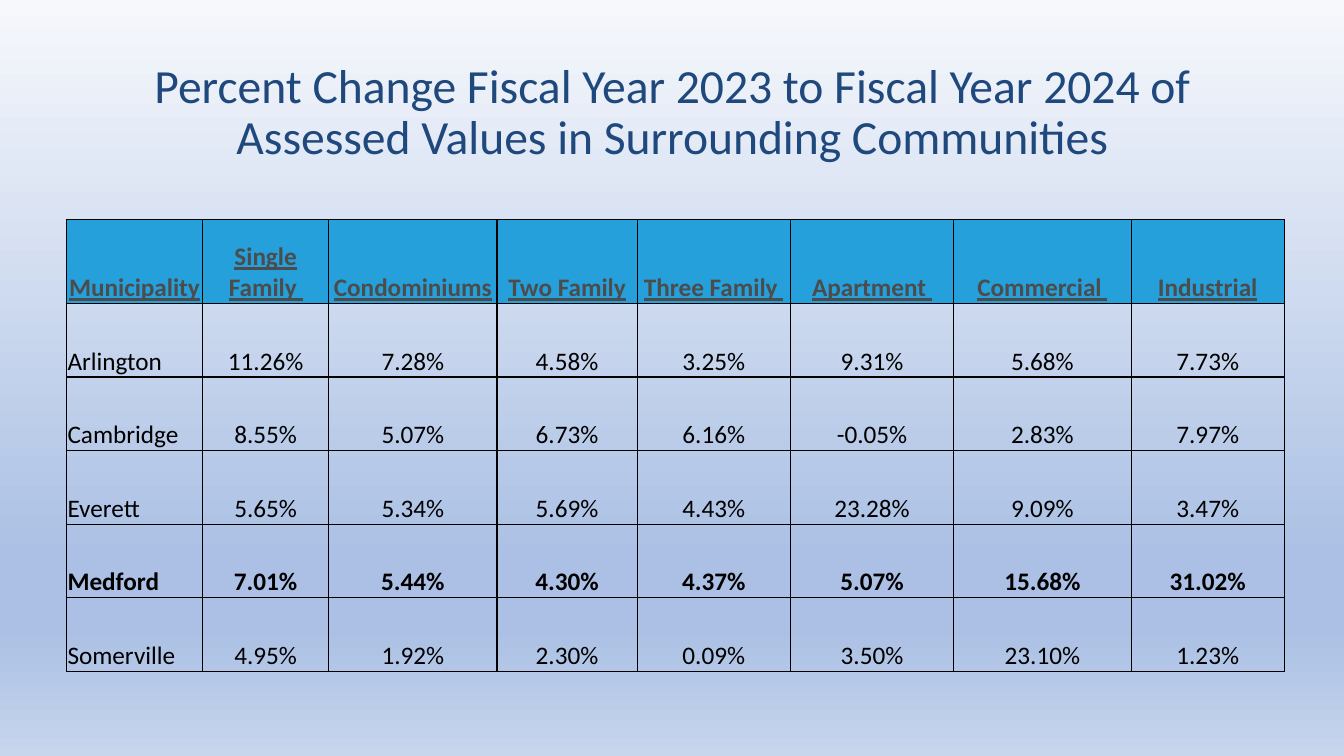
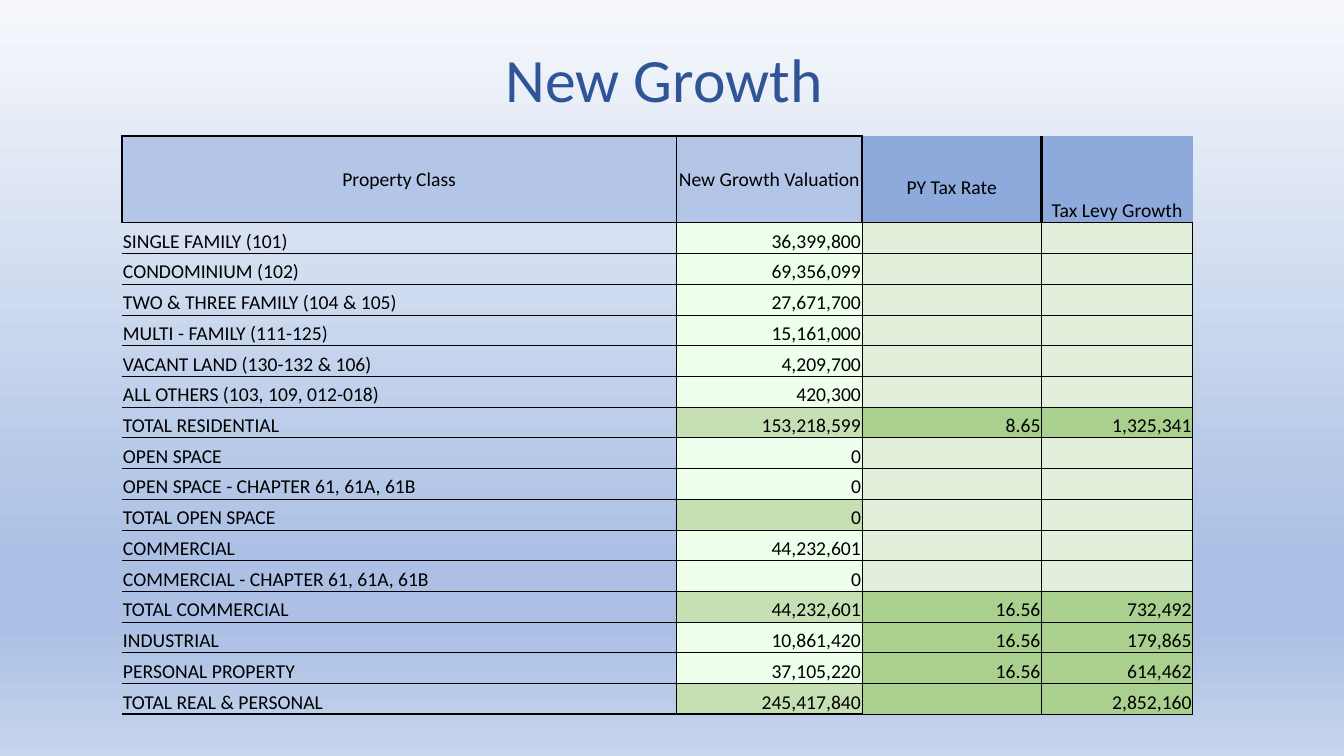
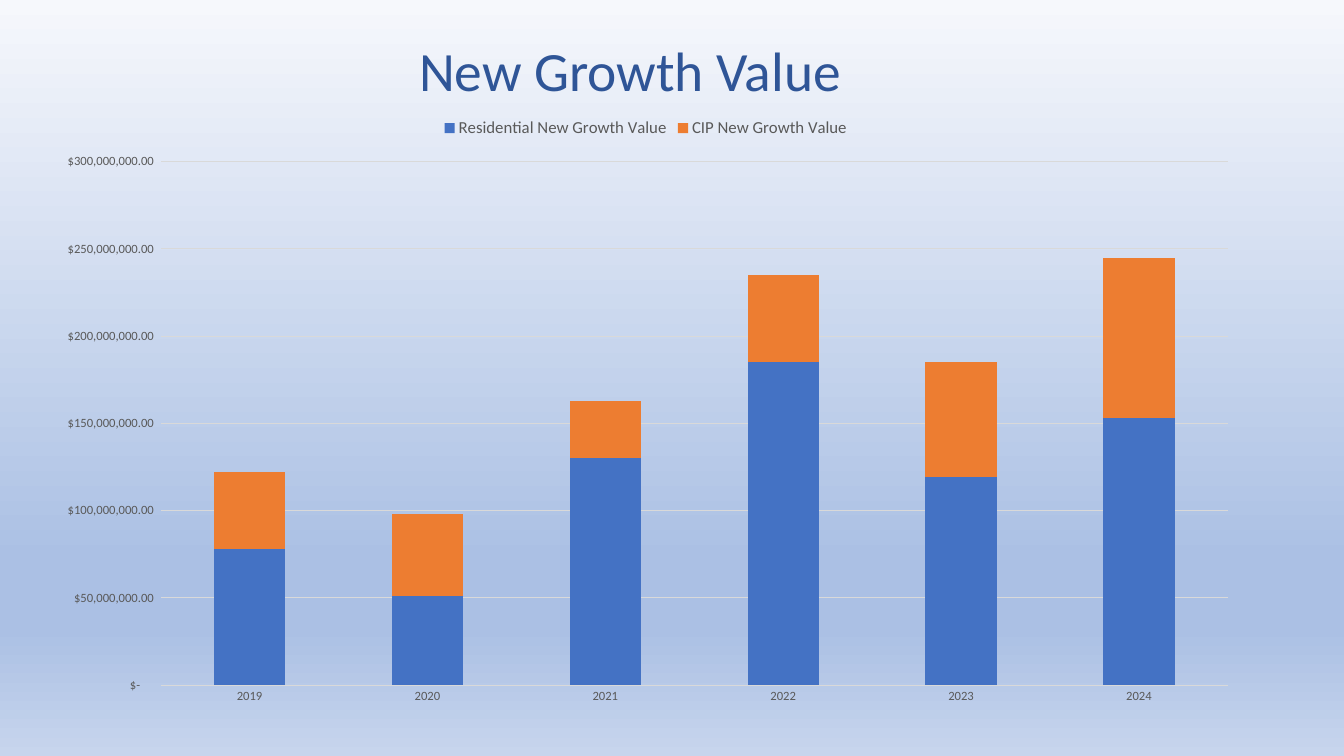
import lxml.etree
import pptx
import pptx.chart.data
import pptx.dml.color
import pptx.enum.chart
import pptx.enum.text
import pptx.oxml.ns
import pptx.util

Inches = pptx.util.Inches
Pt = pptx.util.Pt
RGBColor = pptx.dml.color.RGBColor
ALIGN = pptx.enum.text.PP_ALIGN
ANCHOR = pptx.enum.text.MSO_ANCHOR
qn = pptx.oxml.ns.qn

FONT = "Calibri"
BLACK = RGBColor(0x00, 0x00, 0x00)
NAVY = RGBColor(0x1F, 0x48, 0x7C)
BLUE = RGBColor(0x2F, 0x55, 0x97)
HEADER_CYAN = RGBColor(0x25, 0xA0, 0xDB)
HEADER_GRAY = RGBColor(0x4C, 0x4C, 0x4C)
HEADER_LIGHT = RGBColor(0xB4, 0xC6, 0xE7)
HEADER_DARK = RGBColor(0x8E, 0xA9, 0xDB)
VALUE_GREEN = RGBColor(0xEE, 0xFF, 0xEB)
TOTAL_GREEN = RGBColor(0xC6, 0xE0, 0xB4)
BLANK_GREEN = RGBColor(0xE2, 0xEF, 0xDA)
LEVY_GREEN = RGBColor(0xA9, 0xD0, 0x8E)
AXIS_GRAY = RGBColor(0x59, 0x59, 0x59)
GRID_GRAY = RGBColor(0xD9, 0xD9, 0xD9)
SERIES_BLUE = RGBColor(0x44, 0x72, 0xC4)
SERIES_ORANGE = RGBColor(0xED, 0x7D, 0x31)

BACKGROUND_STOPS = [(0, "F6F8FC"), (74, "ABC0E4"), (83, "ABC0E4"), (100, "C7D5ED")]
NO_TABLE_STYLE = "{2D5ABB26-0587-4C30-8999-92F81FD0307C}"
CURRENCY = '_("$"* #,##0.00_);_("$"* \\(#,##0.00\\);_("$"* "-"??_);_(@_)'
THIN, THICK = 0.5, 2

ASSESSMENTS = [
    ["Municipality", "Single Family ", "Condominiums", "Two Family",
     "Three Family ", "Apartment ", "Commercial ", "Industrial"],
    ["Arlington", "11.26%", "7.28%", "4.58%", "3.25%", "9.31%", "5.68%", "7.73%"],
    ["Cambridge", "8.55%", "5.07%", "6.73%", "6.16%", "-0.05%", "2.83%", "7.97%"],
    ["Everett", "5.65%", "5.34%", "5.69%", "4.43%", "23.28%", "9.09%", "3.47%"],
    ["Medford", "7.01%", "5.44%", "4.30%", "4.37%", "5.07%", "15.68%", "31.02%"],
    ["Somerville", "4.95%", "1.92%", "2.30%", "0.09%", "3.50%", "23.10%", "1.23%"],
]

GROWTH_HEADERS = ["Property Class", "New Growth Valuation", "PY Tax Rate", "Tax Levy Growth"]
GROWTH = [
    ["SINGLE FAMILY (101)", "36,399,800", "", ""],
    ["CONDOMINIUM (102)", "69,356,099", "", ""],
    ["TWO & THREE FAMILY (104 & 105)", "27,671,700", "", ""],
    ["MULTI - FAMILY (111-125)", "15,161,000", "", ""],
    ["VACANT LAND (130-132 & 106)", "4,209,700", "", ""],
    ["ALL OTHERS (103, 109, 012-018)", "420,300", "", ""],
    ["TOTAL RESIDENTIAL", "153,218,599", "8.65", "1,325,341"],
    ["OPEN SPACE", "0", "", ""],
    ["OPEN SPACE - CHAPTER 61, 61A, 61B", "0", "", ""],
    ["TOTAL OPEN SPACE", "0", "", ""],
    ["COMMERCIAL", "44,232,601", "", ""],
    ["COMMERCIAL - CHAPTER 61, 61A, 61B", "0", "", ""],
    ["TOTAL COMMERCIAL", "44,232,601", "16.56", "732,492"],
    ["INDUSTRIAL", "10,861,420", "16.56", "179,865"],
    ["PERSONAL PROPERTY", "37,105,220", "16.56", "614,462"],
    ["TOTAL REAL & PERSONAL", "245,417,840", "", "2,852,160"],
]

YEARS = ["2019", "2020", "2021", "2022", "2023", "2024"]
GROWTH_SERIES = [
    ("Residential New Growth Value", SERIES_BLUE, [78, 51, 130, 185, 119, 153]),
    ("CIP New Growth Value", SERIES_ORANGE, [44, 47, 33, 50, 66, 92]),
]
MILLION = 1_000_000


def set_font(font, size, color):
    font.name = FONT
    font.size = Pt(size)
    font.color.rgb = color


def set_background(master):
    fill = master.background.fill
    fill.gradient()
    fill.gradient_angle = 270
    stops = master.element.xpath("./p:cSld/p:bg//a:gsLst")[0]
    for stop in list(stops):
        stops.remove(stop)
    for percent, color in BACKGROUND_STOPS:
        stop = lxml.etree.SubElement(stops, qn("a:gs"), pos=str(percent * 1000))
        lxml.etree.SubElement(stop, qn("a:srgbClr"), val=color)


def add_page(deck, title, left, height, size, color):
    """Add a blank slide with a centred title."""
    page = deck.slides.add_slide(deck.slide_layouts[6])
    box = page.shapes.add_textbox(Inches(left), Inches(0.4), Inches(11.5), Inches(height))
    frame = box.text_frame
    frame.word_wrap = True
    frame.vertical_anchor = ANCHOR.MIDDLE
    frame.text = title
    paragraph = frame.paragraphs[0]
    paragraph.alignment = ALIGN.CENTER
    paragraph.line_spacing = 0.9
    set_font(paragraph.runs[0].font, size, color)
    return page


def add_plain_table(page, left, top, widths, heights):
    frame = page.shapes.add_table(
        len(heights), len(widths), Inches(left), Inches(top),
        Inches(sum(widths)), Inches(sum(heights)))
    frame.element.xpath(".//a:tableStyleId")[0].text = NO_TABLE_STYLE
    table = frame.table
    table.first_row = table.horz_banding = False
    for column, width in zip(table.columns, widths):
        column.width = Inches(width)
    for row, height in zip(table.rows, heights):
        row.height = Inches(height)
    return table


def set_borders(cell, widths):
    """Draw black borders; widths maps the sides L, R, T, B to points."""
    properties = cell._tc.get_or_add_tcPr()
    for side in "LRTB":
        if side in widths:
            line = lxml.etree.SubElement(
                properties, qn("a:ln" + side), w=str(Pt(widths[side])))
            fill = lxml.etree.SubElement(line, qn("a:solidFill"))
            lxml.etree.SubElement(fill, qn("a:srgbClr"), val=str(BLACK))


def set_cell(cell, text, size, borders, align=ALIGN.LEFT, fill=None,
             color=BLACK, anchor=ANCHOR.BOTTOM):
    set_borders(cell, borders)
    if fill is None:
        cell.fill.background()
    else:
        cell.fill.solid()
        cell.fill.fore_color.rgb = fill
    cell.margin_left = cell.margin_right = cell.margin_top = Inches(0.01)
    cell.margin_bottom = 0
    cell.vertical_anchor = anchor
    cell.text_frame.text = text
    paragraph = cell.text_frame.paragraphs[0]
    paragraph.alignment = align
    for run in paragraph.runs:
        set_font(run.font, size, color)
    if not text:
        lxml.etree.SubElement(paragraph._p, qn("a:endParaRPr"), sz=str(size * 100))


def add_assessment_table(page):
    widths = [1.35, 1.25, 1.67, 1.39, 1.52, 1.62, 1.76, 1.52]
    table = add_plain_table(page, 0.66, 2.18, widths, [0.83] + [0.73] * 5)
    borders = dict.fromkeys("LRTB", 1)
    for row, texts in enumerate(ASSESSMENTS):
        header = row == 0
        for column, text in enumerate(texts):
            cell = table.cell(row, column)
            set_cell(cell, text, 18, borders,
                     align=ALIGN.CENTER if header or column else ALIGN.LEFT,
                     fill=HEADER_CYAN if header else None,
                     color=HEADER_GRAY if header else BLACK)
            font = cell.text_frame.paragraphs[0].runs[0].font
            font.bold = header or texts[0] == "Medford"
            font.underline = header


def growth_fill(texts, column):
    if column == 0:
        return None
    if column == 1:
        return TOTAL_GREEN if texts[0].startswith("TOTAL") else VALUE_GREEN
    return LEVY_GREEN if texts[3] else BLANK_GREEN


def add_growth_table(page):
    heights = [0.86] + [0.305] * len(GROWTH) + [0.29]
    table = add_plain_table(page, 1.21, 1.35, [5.5, 1.84, 1.78, 1.5], heights)

    header_borders = [
        {"L": THICK, "T": THICK, "R": THIN, "B": THIN},
        {"L": THIN, "T": THICK, "R": THICK, "B": THIN},
        {"L": THICK, "B": THIN},
        {"B": THIN},
    ]
    for column, text in enumerate(GROWTH_HEADERS):
        framed = column < 2
        set_cell(table.cell(0, column), text, 14, header_borders[column], ALIGN.CENTER,
                 fill=HEADER_LIGHT if framed else HEADER_DARK,
                 anchor=ANCHOR.MIDDLE if framed else ANCHOR.BOTTOM)
    table.cell(0, 2).margin_bottom = Inches(0.23)

    for row, texts in enumerate(GROWTH, start=1):
        for column, text in enumerate(texts):
            borders = dict.fromkeys("LRTB" if column else "RTB", THIN)
            if row == len(GROWTH) and column < 2:
                borders["B"] = THICK
            set_cell(table.cell(row, column), text, 14, borders,
                     align=ALIGN.RIGHT if column else ALIGN.LEFT,
                     fill=growth_fill(texts, column))

    for column in range(4):
        set_cell(table.cell(len(GROWTH) + 1, column), "", 14,
                 {"T": THICK if column < 2 else THIN})


def set_plot_layout(chart, **fractions):
    """Place the inner plot area by fractions of the chart frame."""
    plot_area = chart.element.xpath(".//c:plotArea")[0]
    for old_layout in plot_area.findall(qn("c:layout")):
        plot_area.remove(old_layout)
    layout = lxml.etree.Element(qn("c:layout"))
    plot_area.insert(0, layout)
    manual = lxml.etree.SubElement(layout, qn("c:manualLayout"))
    settings = {"layoutTarget": "inner", "xMode": "edge", "yMode": "edge", **fractions}
    for name, value in settings.items():
        lxml.etree.SubElement(manual, qn("c:" + name), val=str(value))


def style_axis(axis):
    axis.major_tick_mark = axis.minor_tick_mark = pptx.enum.chart.XL_TICK_MARK.NONE
    axis.format.line.fill.background()
    set_font(axis.tick_labels.font, 9, AXIS_GRAY)


def add_growth_chart(page):
    data = pptx.chart.data.CategoryChartData(number_format=CURRENCY)
    data.categories = YEARS
    for name, _, millions in GROWTH_SERIES:
        data.add_series(name, [value * MILLION for value in millions])
    chart = page.shapes.add_chart(
        pptx.enum.chart.XL_CHART_TYPE.COLUMN_STACKED,
        Inches(0.39), Inches(1.06), Inches(12.03), Inches(6.04), data).chart
    chart.has_title = False
    set_font(chart.font, 10, BLACK)

    plot = chart.plots[0]
    plot.vary_by_categories = False
    plot.gap_width = 150
    plot.overlap = 100
    for series, (_, color, _) in zip(plot.series, GROWTH_SERIES):
        series.format.fill.solid()
        series.format.fill.fore_color.rgb = color

    style_axis(chart.category_axis)
    values = chart.value_axis
    style_axis(values)
    values.minimum_scale = 0
    values.maximum_scale = 300 * MILLION
    values.major_unit = 50 * MILLION
    values.tick_labels.number_format = CURRENCY
    values.tick_labels.number_format_is_linked = False
    values.has_major_gridlines = True
    grid_line = values.major_gridlines.format.line
    grid_line.width = Pt(0.75)
    grid_line.color.rgb = GRID_GRAY

    chart.has_legend = True
    chart.legend.position = pptx.enum.chart.XL_LEGEND_POSITION.TOP
    chart.legend.include_in_layout = False
    set_font(chart.legend.font, 12, AXIS_GRAY)
    set_plot_layout(chart, x=0.1, y=0.09, w=0.88, h=0.86)


def main():
    deck = pptx.Presentation()
    deck.slide_width = Inches(13.33)
    deck.slide_height = Inches(7.5)
    set_background(deck.slide_master)

    title = ("Percent Change Fiscal Year 2023 to Fiscal Year 2024 of "
             "Assessed Values in Surrounding Communities")
    add_assessment_table(add_page(deck, title, 0.92, 1.45, 34, NAVY))
    add_growth_table(add_page(deck, "New Growth", 0.84, 0.83, 44, BLUE))
    add_growth_chart(add_page(deck, "New Growth Value", 0.5, 0.66, 39.6, BLUE))
    deck.save("out.pptx")


if __name__ == "__main__":
    main()
